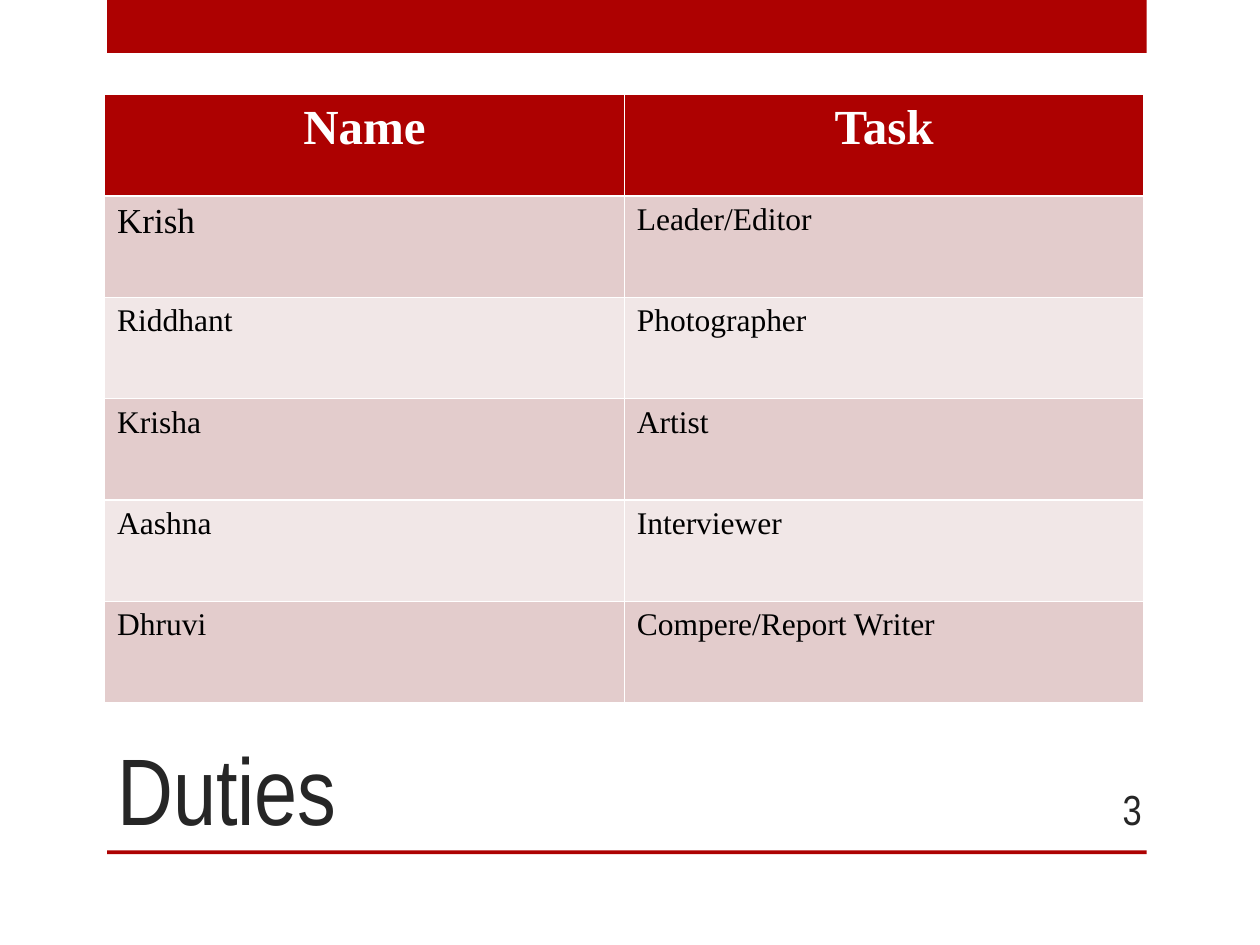
"""Build the Duties slide with its table of names and tasks."""
from pptx import Presentation
from pptx.dml.color import RGBColor
from pptx.enum.shapes import MSO_SHAPE
from pptx.enum.text import MSO_ANCHOR, PP_ALIGN
from pptx.util import Inches, Pt

RECT = MSO_SHAPE.RECTANGLE
LEFT, CENTER, RIGHT = PP_ALIGN.LEFT, PP_ALIGN.CENTER, PP_ALIGN.RIGHT
MIDDLE, BOTTOM = MSO_ANCHOR.MIDDLE, MSO_ANCHOR.BOTTOM
COLORS = {"red": "AD0101", "dark": "262626", "white": "FFFFFF",
          "black": "000000", "band": "E3CCCC", "light": "F1E7E7"}
HEADING, BODY = "Arial Narrow", "Times New Roman"
DUTIES = [("Name", "Task"), ("Krish", "Leader/Editor"),
          ("Riddhant", "Photographer"), ("Krisha", "Artist"),
          ("Aashna", "Interviewer"), ("Dhruvi", "Compere/Report Writer")]


def rgb(name):
    return RGBColor.from_string(COLORS[name])


def write(tf, text, size=18, font=BODY, color="black", bold=False, align=LEFT):
    p = tf.paragraphs[0]
    p.alignment = align
    r = p.add_run()
    r.text = text
    r.font.size = Pt(size)
    r.font.name = font
    r.font.bold = bold
    r.font.color.rgb = rgb(color)


class Deck:
    def __init__(self, prs):
        self.prs = prs
        self.s = None

    def add_slide(self):
        self.s = self.prs.slides.add_slide(self.prs.slide_layouts[5])

    def bar(self, x, y, w, h):
        sp = self.s.shapes.add_shape(RECT, Inches(x), Inches(y), Inches(w), Inches(h))
        sp.shadow.inherit = False
        sp.fill.solid()
        sp.fill.fore_color.rgb = rgb("red")
        sp.line.fill.background()

    def title(self, text, x, y, w, h):
        sp = self.s.shapes.title
        sp.left, sp.top, sp.width, sp.height = map(Inches, (x, y, w, h))
        sp.text_frame.vertical_anchor = BOTTOM
        write(sp.text_frame, text, size=54, font=HEADING, color="dark")

    def number(self, text, x, y, w, h):
        sp = self.s.shapes.add_textbox(Inches(x), Inches(y), Inches(w), Inches(h))
        tf = sp.text_frame
        tf.word_wrap = True
        tf.vertical_anchor = MIDDLE
        write(tf, text, size=24, font=HEADING, color="dark", align=RIGHT)

    def table(self, rows, x, y, w, h):
        table = self.s.shapes.add_table(len(rows), len(rows[0]), Inches(x), Inches(y),
                                        Inches(w), Inches(h)).table
        for i, row in enumerate(rows):
            for j, text in enumerate(row):
                cell = table.cell(i, j)
                cell.fill.solid()
                if i == 0:
                    fill = "red"
                    style = dict(size=28, color="white", bold=True, align=CENTER)
                else:
                    fill = "band" if i % 2 else "light"
                    style = dict(size=20 if (i, j) == (1, 0) else 18)
                cell.fill.fore_color.rgb = rgb(fill)
                write(cell.text_frame, text, **style)


def main():
    prs = Presentation()
    prs.slide_width, prs.slide_height = Inches(10), Inches(7.5)
    deck = Deck(prs)
    deck.add_slide()
    deck.bar(0.85, 0, 8.25, 0.42)
    deck.bar(0.85, 6.75, 8.25, 0.03)
    deck.title("Duties", 0.83, 5, 7.42, 1.75)
    deck.number("3", 8.33, 6.22, 0.83, 0.4)
    deck.table(DUTIES, 0.83, 0.75, 8.25, 4.83)
    prs.save("out.pptx")


if __name__ == "__main__":
    main()
